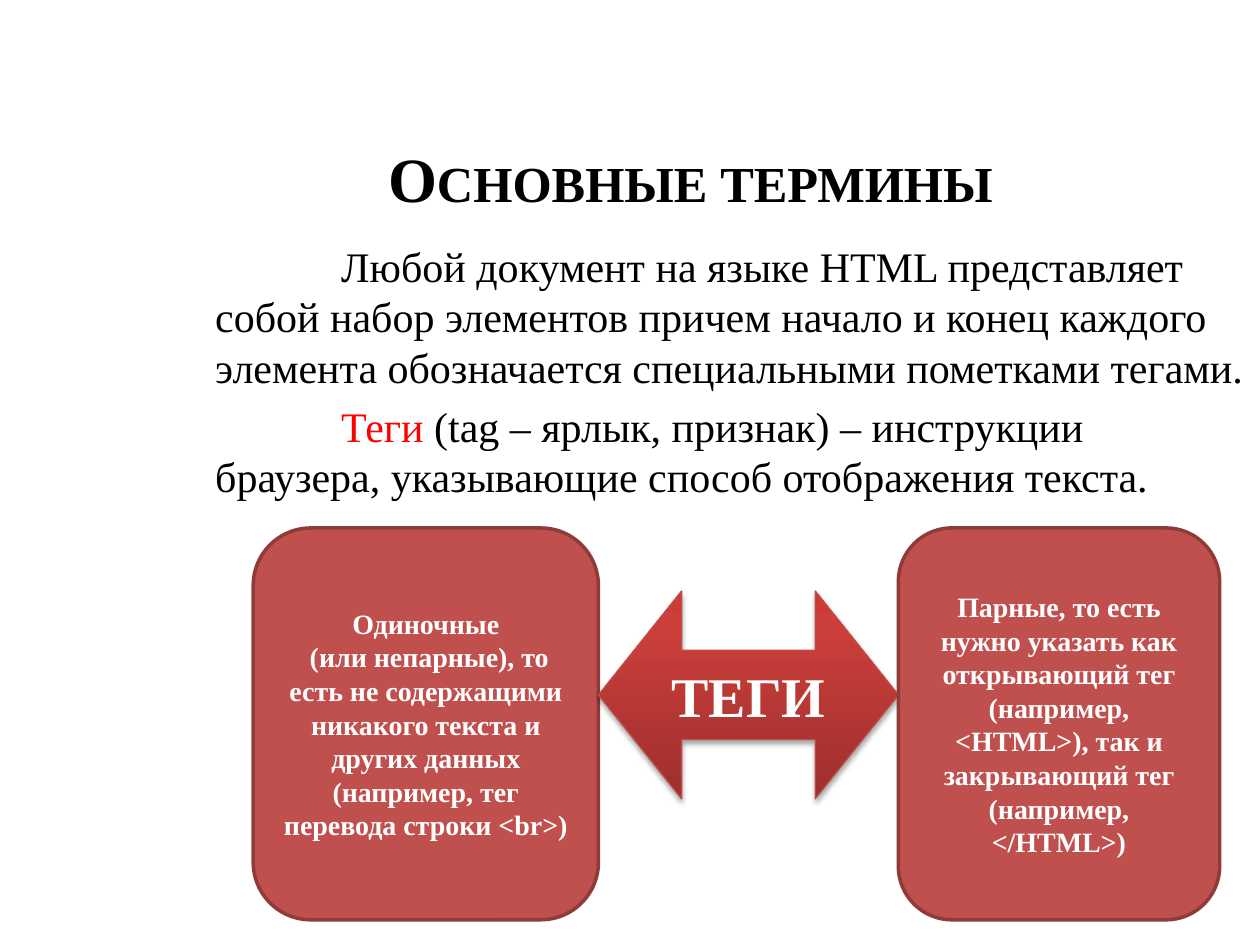
from copy import deepcopy

from lxml.etree import SubElement
from pptx import Presentation
from pptx.dml.color import RGBColor
from pptx.enum.shapes import MSO_SHAPE as Shape
from pptx.enum.text import MSO_ANCHOR as Anchor, PP_ALIGN as Align
from pptx.oxml.ns import qn
from pptx.util import Inches, Pt

FONT = "Times New Roman"
BLACK = RGBColor(0x00, 0x00, 0x00)
WHITE = RGBColor(0xFF, 0xFF, 0xFF)
RED = RGBColor(0xFF, 0x00, 0x00)
CARD_FILL = RGBColor(0xC0, 0x50, 0x4D)
CARD_LINE = RGBColor(0x8E, 0x3B, 0x39)
ARROW_LINE = RGBColor(0xBF, 0x4C, 0x48)
ARROW_STOPS = [
    (0, RGBColor(0x9C, 0x2F, 0x2D)),
    (0.8, RGBColor(0xCB, 0x3E, 0x3A)),
    (1, RGBColor(0xCE, 0x3B, 0x37)),
]

TITLE = "Основные термины"
DEFINITIONS = [
    [("Любой документ на языке HTML представляет собой набор элементов причем "
      "начало и конец каждого элемента обозначается специальными пометками тегами.", BLACK)],
    [("Теги ", RED),
     ("(tag – ярлык, признак) – инструкции браузера, указывающие способ "
      "отображения текста.", BLACK)],
]
SINGLE_TAGS = ("Одиночные\v (или непарные), то есть не содержащими никакого текста "
               "и других данных (например, тег перевода строки <br>)")
PAIRED_TAGS = ("Парные, то есть нужно указать как открывающий тег (например, <HTML>), "
               "так и закрывающий тег (например, </HTML>)")


def set_font(font, size, color, bold=False):
    """Give a font the slide's typeface with a size, colour and weight."""
    font.name = FONT
    font.size = Pt(size)
    font.bold = bold
    font.color.rgb = color


def write_centered(shape, text, size, color):
    """Write one bold paragraph in the middle of a shape."""
    frame = shape.text_frame
    frame.word_wrap = True
    frame.vertical_anchor = Anchor.MIDDLE
    frame.text = text
    paragraph = frame.paragraphs[0]
    paragraph.alignment = Align.CENTER
    set_font(paragraph.font, size, color, bold=True)


def place_title(slide, box):
    """Move the title placeholder into its box and set it in small capitals."""
    title = slide.shapes.title
    title.left, title.top, title.width, title.height = map(Inches, box)
    write_centered(title, TITLE, 36, BLACK)
    title.text_frame.paragraphs[0].runs[0].font._element.set("cap", "small")


def add_definitions(slide, box):
    """Add the white panel with the two indented definitions."""
    panel = slide.shapes.add_textbox(*map(Inches, box))
    panel.fill.solid()
    panel.fill.fore_color.rgb = WHITE
    frame = panel.text_frame
    frame.word_wrap = True
    for index, pieces in enumerate(DEFINITIONS):
        paragraph = frame.add_paragraph() if index else frame.paragraphs[0]
        paragraph._p.get_or_add_pPr().set("indent", str(Inches(1)))
        if index:
            paragraph.space_before = Pt(4.8)
        for text, color in pieces:
            run = paragraph.add_run()
            run.text = text
            set_font(run.font, 24, color)


def add_card(slide, box, text):
    """Add a rounded card describing one kind of tag."""
    card = slide.shapes.add_shape(Shape.ROUNDED_RECTANGLE, *map(Inches, box))
    card.shadow.inherit = False
    card.fill.solid()
    card.fill.fore_color.rgb = CARD_FILL
    card.line.color.rgb = CARD_LINE
    card.line.width = Pt(2)
    write_centered(card, text, 16, WHITE)


def add_shadow(shape):
    """Cast a soft black shadow straight down from a shape."""
    shape.shadow.inherit = False
    effects = shape._element.spPr.find(qn("a:effectLst"))
    shadow = SubElement(effects, qn("a:outerShdw"), blurRad=str(Pt(3.1)),
                        dist=str(Pt(1.8)), dir="5400000", rotWithShape="0")
    color = SubElement(shadow, qn("a:srgbClr"), val=str(BLACK))
    SubElement(color, qn("a:alpha"), val="35000")


def add_arrow(slide, box):
    """Add the shaded double arrow that links the two cards."""
    arrow = slide.shapes.add_shape(Shape.LEFT_RIGHT_ARROW, *map(Inches, box))
    arrow.adjustments[0] = 0.43
    arrow.adjustments[1] = 0.4
    arrow.fill.gradient()
    arrow.fill.gradient_angle = 90
    stop_list = arrow._element.spPr.find(qn("a:gradFill")).find(qn("a:gsLst"))
    stop_list.append(deepcopy(stop_list[-1]))
    for stop, (position, color) in zip(arrow.fill.gradient_stops, ARROW_STOPS):
        stop.position = position
        stop.color.rgb = color
    arrow.line.color.rgb = ARROW_LINE
    arrow.line.width = Pt(0.75)
    add_shadow(arrow)
    write_centered(arrow, "ТЕГИ", 32, WHITE)


def main():
    """Build the slide and save the presentation."""
    presentation = Presentation()
    presentation.slide_width = Inches(10)
    presentation.slide_height = Inches(7.5)
    slide = presentation.slides.add_slide(presentation.slide_layouts[5])
    add_definitions(slide, (1.61, 1.86, 8.39, 4.73))
    place_title(slide, (1.87, 0.94, 7.22, 0.94))
    add_card(slide, (2.01, 4.19, 2.74, 3.11), SINGLE_TAGS)
    add_arrow(slide, (4.75, 4.69, 2.38, 1.65))
    add_card(slide, (7.13, 4.19, 2.55, 3.11), PAIRED_TAGS)
    presentation.save("out.pptx")


if __name__ == "__main__":
    main()
